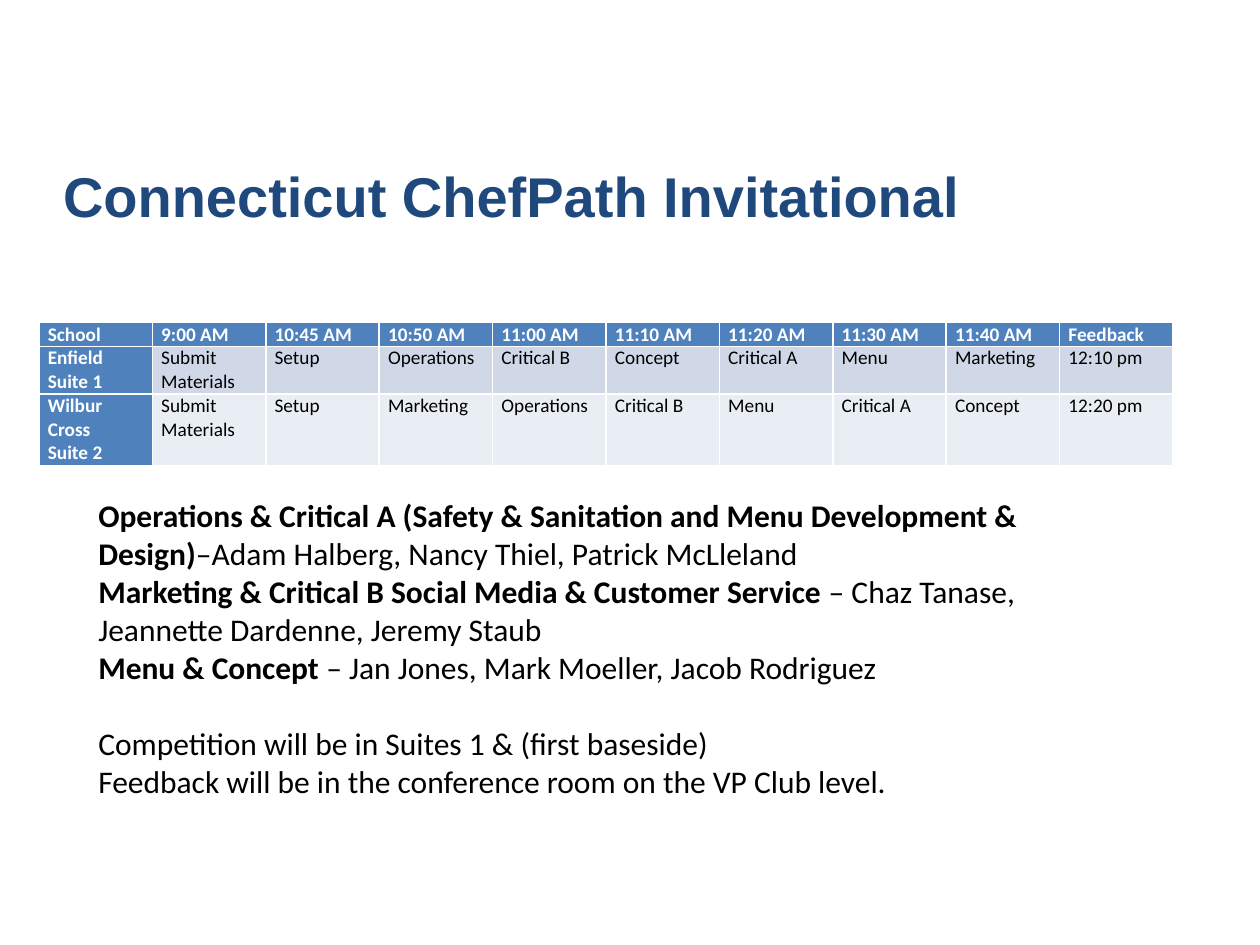
"""Build the competition schedule slide with its timetable and judge list."""
from dataclasses import dataclass

from lxml.etree import SubElement
from pptx import Presentation
from pptx.dml.color import RGBColor
from pptx.enum.text import MSO_ANCHOR as Anchor, MSO_AUTO_SIZE as AutoSize, PP_ALIGN as Align
from pptx.oxml.ns import qn
from pptx.util import Inches, Pt


@dataclass(frozen=True)
class Theme:
    title_font: str = "Arial"
    body_font: str = "Calibri"
    title_size: int = 32
    body_size: int = 18
    table_size: int = 11
    navy: str = "1F497D"
    blue: str = "4F81BD"
    bands: tuple = ("D0D8E8", "E9EDF4")
    white: str = "FFFFFF"
    black: str = "000000"


THEME = Theme()
TITLE = "Connecticut ChefPath Invitational"
SCHEDULE = [
    ["School", "9:00 AM", "10:45 AM", "10:50 AM", "11:00 AM",
     "11:10 AM", "11:20 AM", "11:30 AM", "11:40 AM", "Feedback"],
    ["Enfield\nSuite 1", "Submit Materials", "Setup", "Operations", "Critical B",
     "Concept", "Critical A", "Menu", "Marketing", "12:10 pm"],
    ["Wilbur Cross\nSuite 2", "Submit Materials", "Setup", "Marketing", "Operations",
     "Critical B", "Menu", "Critical A", "Concept", "12:20 pm"],
]
LINES_PER_ROW = [1, 2, 3]
JUDGES = [
    ("Operations & Critical A (Safety & Sanitation and Menu Development & Design)",
     "–Adam Halberg, Nancy Thiel, Patrick McLleland"),
    ("Marketing & Critical B Social Media & Customer Service ",
     "– Chaz Tanase, Jeannette Dardenne, Jeremy Staub"),
    ("Menu & Concept ", "– Jan Jones, Mark Moeller, Jacob Rodriguez"),
]
LOCATIONS = [
    "Competition will be in Suites 1 & (first baseside)",
    "Feedback will be in the conference room on the VP Club level.",
]
COLUMN_WIDTH = Inches(0.9)
LINE_HEIGHT = Inches(0.18)


def place(shape, left, top, width, height):
    shape.left, shape.top = Inches(left), Inches(top)
    shape.width, shape.height = Inches(width), Inches(height)


def style(font, name, size, color, bold):
    font.name, font.size, font.bold = name, Pt(size), bold
    font.color.rgb = RGBColor.from_string(color)


def add_title(slide):
    title = slide.shapes.title
    place(title, 0.5, 1.17, 9, 0.75)
    frame = title.text_frame
    frame.text = TITLE
    frame.auto_size = AutoSize.NONE
    frame.vertical_anchor = Anchor.MIDDLE
    frame.margin_left = frame.margin_right = 0
    paragraph = frame.paragraphs[0]
    paragraph.alignment = Align.LEFT
    style(paragraph.runs[0].font, THEME.title_font, THEME.title_size, THEME.navy, True)


def add_schedule(slide):
    rows, columns = len(SCHEDULE), len(SCHEDULE[0])
    table = slide.shapes.add_table(
        rows, columns, Inches(0.31), Inches(2.56),
        COLUMN_WIDTH * columns, LINE_HEIGHT * sum(LINES_PER_ROW)).table
    table.first_col = True
    for row_index, values in enumerate(SCHEDULE):
        table.rows[row_index].height = LINE_HEIGHT * LINES_PER_ROW[row_index]
        for column_index, value in enumerate(values):
            heading = row_index == 0 or column_index == 0
            fill = THEME.blue if heading else THEME.bands[row_index - 1]
            color = THEME.white if heading else THEME.black
            cell = table.cell(row_index, column_index)
            cell.text = value
            cell.margin_left = cell.margin_right = Inches(0.07)
            cell.margin_top = cell.margin_bottom = 0
            cell.fill.solid()
            cell.fill.fore_color.rgb = RGBColor.from_string(fill)
            for paragraph in cell.text_frame.paragraphs:
                style(paragraph.runs[0].font, THEME.body_font, THEME.table_size, color, heading)


def add_details(slide):
    body = slide.placeholders[1]
    place(body, 0.68, 3.89, 7.68, 3.13)
    frame = body.text_frame
    frame.auto_size = AutoSize.NONE
    lines = JUDGES + [("", location) for location in LOCATIONS]
    for index, parts in enumerate(lines):
        paragraph = frame.paragraphs[0] if index == 0 else frame.add_paragraph()
        paragraph.space_before = Pt(22 if index == len(JUDGES) else 0)
        properties = paragraph._p.get_or_add_pPr()
        properties.set("marL", "0")
        properties.set("indent", "0")
        SubElement(properties, qn("a:buNone"))
        for text, bold in zip(parts, (True, False)):
            if text:
                run = paragraph.add_run()
                run.text = text
                style(run.font, THEME.body_font, THEME.body_size, THEME.black, bold)


def main():
    presentation = Presentation()
    presentation.slide_width, presentation.slide_height = Inches(10), Inches(7.5)
    slide = presentation.slides.add_slide(presentation.slide_layouts[1])
    add_title(slide)
    add_schedule(slide)
    add_details(slide)
    presentation.save("out.pptx")


if __name__ == "__main__":
    main()
